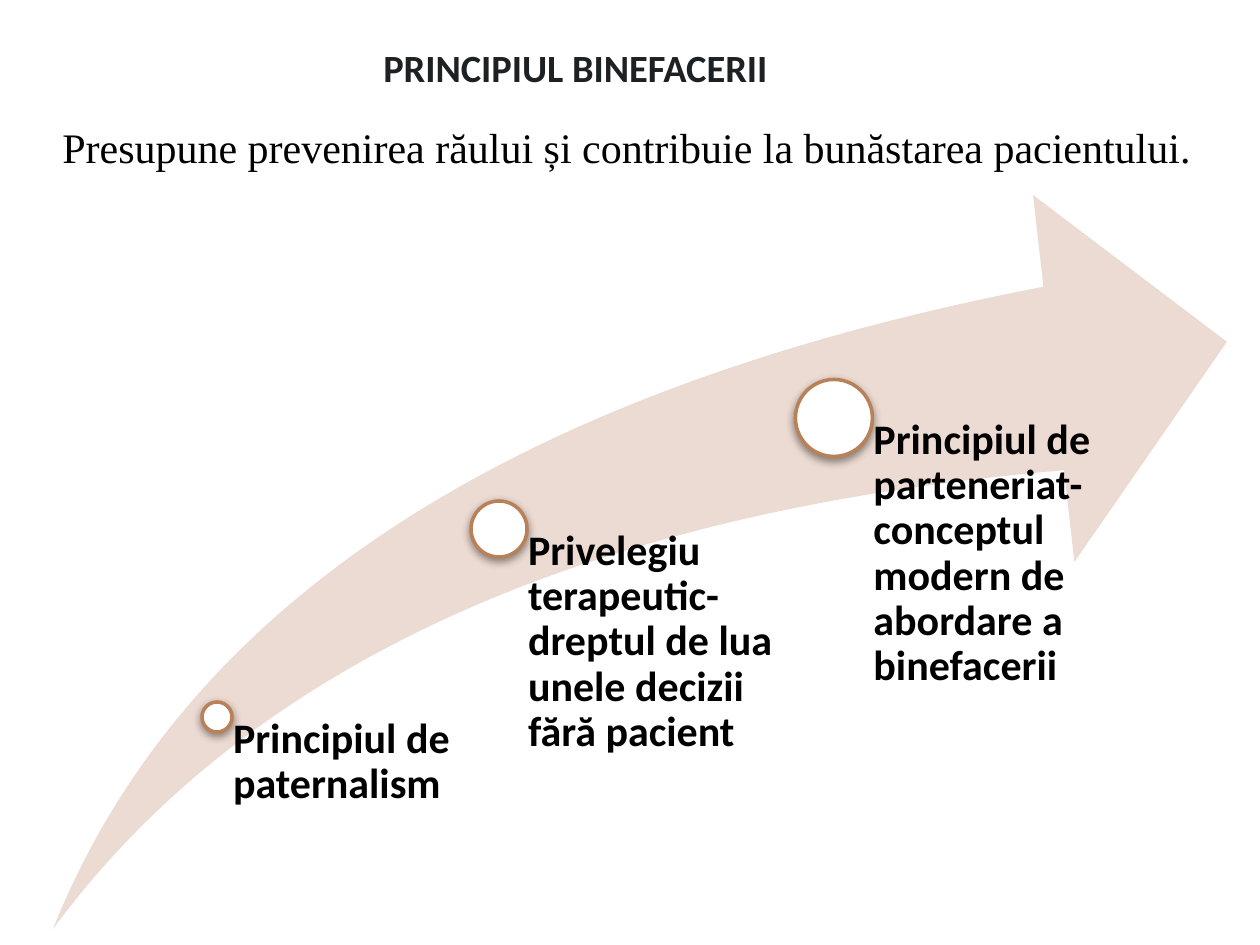
from lxml import etree
from pptx import Presentation
from pptx.dml.color import RGBColor
from pptx.enum.shapes import MSO_SHAPE
from pptx.enum.text import MSO_ANCHOR, PP_ALIGN
from pptx.oxml.ns import qn
from pptx.util import Emu, Pt

SWOOSH, OVAL = MSO_SHAPE.SWOOSH_ARROW, MSO_SHAPE.OVAL
TOP, BOTTOM = MSO_ANCHOR.TOP, MSO_ANCHOR.BOTTOM
LEFT, CENTER = PP_ALIGN.LEFT, PP_ALIGN.CENTER

COLORS = {"title": "1E2124", "text": "000000", "arrow": "ECDBD2",
          "dot": "FFFFFF", "ring": "B98157", "shadow": "000000"}

# Centre x and y and diameter relative to the arrow box, label width, label
MILESTONES = [
    (164, 522, 30, 273, "Principiul de paternalism"),
    (446, 334, 56, 282,
     "Privelegiu terapeutic-dreptul de lua unele decizii fără pacient"),
    (781, 223, 77, 282,
     "Principiul de parteneriat-conceptul modern de abordare a binefacerii"),
]


def px(length):
    return Emu(round(length * 914400 / 126))


def color(name):
    return RGBColor.from_string(COLORS[name])


def add_text(shapes, box, text, font, size, color_name="text", bold=False,
             align=LEFT, anchor=TOP, spacing=None):
    text_box = shapes.add_textbox(*map(px, box))
    frame = text_box.text_frame
    frame.word_wrap = True
    frame.vertical_anchor = anchor
    frame.text = text
    paragraph = frame.paragraphs[0]
    paragraph.alignment = align
    paragraph.line_spacing = spacing
    run_font = paragraph.runs[0].font
    run_font.name, run_font.size, run_font.bold = font, Pt(size), bold
    run_font.color.rgb = color(color_name)
    return text_box


def add_shape(shapes, kind, box, fill):
    shape = shapes.add_shape(kind, *map(px, box))
    shape.shadow.inherit = False
    shape.fill.solid()
    shape.fill.fore_color.rgb = color(fill)
    shape.line.fill.background()
    return shape


def add_soft_shadow(shape):
    effects = shape._element.spPr.find(qn("a:effectLst"))
    shadow = etree.SubElement(effects, qn("a:outerShdw"), blurRad=str(Pt(5)),
                              dist=str(Pt(2)), dir="5400000", rotWithShape="0")
    shade = etree.SubElement(shadow, qn("a:srgbClr"), val=COLORS["shadow"])
    etree.SubElement(shade, qn("a:alpha"), val="43000")


def add_heading(slide, left, top, width):
    # Title, then the definition under it
    add_text(slide.shapes, (left + 20, top, width - 159, 96),
             "PRINCIPIUL BINEFACERII", "Calibri", 22, "title", True,
             CENTER, BOTTOM, Pt(20))
    definition = add_text(
        slide.shapes, (left, top + 115, width, 96),
        "Presupune prevenirea răului și contribuie la bunăstarea pacientului.",
        "Times New Roman", 24)
    definition.text_frame.paragraphs[0]._p.get_or_add_pPr().set(
        "marL", str(px(6)))


def add_milestone(shapes, center_x, center_y, diameter, width, bottom, label):
    radius = diameter / 2
    dot = add_shape(shapes, OVAL, (center_x - radius, center_y - radius,
                                   diameter, diameter), "dot")
    dot.line.color.rgb = color("ring")
    dot.line.width = Pt(2)
    add_soft_shadow(dot)

    # The label starts at the dot's centre and is inset past its edge
    label_box = add_text(shapes, (center_x, center_y, width, bottom - center_y),
                         label, "Calibri", 24, bold=True, spacing=0.9)
    frame = label_box.text_frame
    frame.margin_left = px(radius + 1)
    frame.margin_top = frame.margin_right = frame.margin_bottom = 0


def add_rising_arrow(slide, left, top, width, height):
    shapes = slide.shapes.add_group_shape().shapes
    arrow = add_shape(shapes, SWOOSH, (left, top, width, height), "arrow")
    arrow.adjustments[0] = arrow.adjustments[1] = 0.25
    for x, y, diameter, label_width, label in MILESTONES:
        add_milestone(shapes, left + x, top + y, diameter, label_width,
                      top + height, label)


def main():
    deck = Presentation()
    deck.slide_width, deck.slide_height = px(1260), px(945)
    slide = deck.slides.add_slide(deck.slide_layouts[6])
    add_heading(slide, 44, 0, 1182)
    add_rising_arrow(slide, 53, 195, 1174, 734)
    deck.save("out.pptx")


if __name__ == "__main__":
    main()
